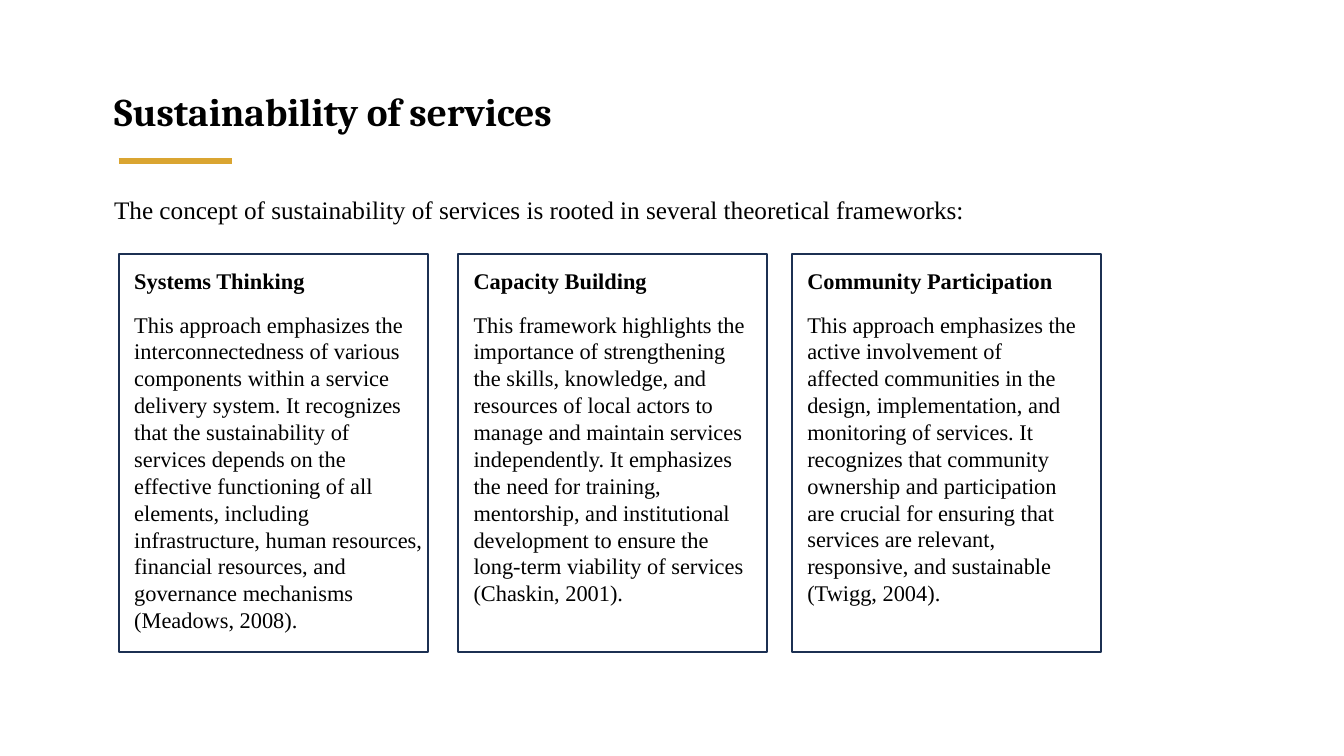
"""Build a slide on the theoretical frameworks behind the sustainability of services."""
from dataclasses import dataclass

from lxml.etree import SubElement
from pptx import Presentation
from pptx.dml.color import RGBColor
from pptx.enum.shapes import MSO_CONNECTOR, MSO_SHAPE
from pptx.enum.text import MSO_ANCHOR, MSO_AUTO_SIZE, PP_ALIGN
from pptx.oxml.ns import qn
from pptx.shapes.autoshape import Shape
from pptx.slide import Slide
from pptx.text.text import TextFrame
from pptx.util import Inches, Length, Pt

SLIDE_WIDTH, SLIDE_HEIGHT = Inches(13.33), Inches(7.5)
GRID_COLUMNS = GRID_ROWS = 12
BODY_FONT, TITLE_FONT = "Times New Roman", "Cambria"
BLACK, NAVY, GOLD = "000000", "1C3052", "DAA531"
TEXT_LEFT = 0.93
CARD_LEFT, CARD_TOP, CARD_WIDTH, CARD_HEIGHT = 1.06, 4.03, 2.76, 6.32
CARD_INDENT, CARD_TEXT_TOP = 0.05, 4.16


@dataclass
class Framework:
    """A framed theory, with its left edge and text size in grid units."""

    left: float
    text_width: float
    text_height: float
    heading: str
    description: str


FRAMEWORKS = [
    Framework(
        CARD_LEFT, 2.76, 6.03, "Systems Thinking",
        "This approach emphasizes the interconnectedness of various components within a "
        "service delivery system. It recognizes that the sustainability of services depends "
        "on the effective functioning of all elements, including infrastructure, human "
        "resources, financial resources, and governance mechanisms (Meadows, 2008).",
    ),
    Framework(
        4.09, 2.6, 6.03, "Capacity Building",
        "This framework highlights the importance of strengthening the skills, knowledge, "
        "and resources of local actors to manage and maintain services independently. It "
        "emphasizes the need for training, mentorship, and institutional development to "
        "ensure the long-term viability of services (Chaskin, 2001).",
    ),
    Framework(
        7.07, 2.6, 5.6, "Community Participation",
        "This approach emphasizes the active involvement of affected communities in the "
        "design, implementation, and monitoring of services. It recognizes that community "
        "ownership and participation are crucial for ensuring that services are relevant, "
        "responsive, and sustainable (Twigg, 2004).",
    ),
]


def columns(count: float) -> Length:
    """Convert grid columns to a length."""
    return Length(round(SLIDE_WIDTH * count / GRID_COLUMNS))


def rows(count: float) -> Length:
    """Convert grid rows to a length."""
    return Length(round(SLIDE_HEIGHT * count / GRID_ROWS))


def color(value: str) -> RGBColor:
    """Turn a hex string into a colour."""
    return RGBColor.from_string(value)


def place(box: Shape, left: float, top: float, width: float, height: float) -> None:
    """Put a box on the grid."""
    box.left, box.top = columns(left), rows(top)
    box.width, box.height = columns(width), rows(height)


def write(frame: TextFrame, texts: list[str], size: float,
          font: str = BODY_FONT, bold_first: bool = False) -> None:
    """Fill a text frame with left-aligned paragraphs."""
    frame.word_wrap = True
    frame.auto_size = MSO_AUTO_SIZE.SHAPE_TO_FIT_TEXT
    frame.vertical_anchor = MSO_ANCHOR.TOP
    for index, text in enumerate(texts):
        para = frame.add_paragraph() if index else frame.paragraphs[0]
        para.text = text
        para.alignment = PP_ALIGN.LEFT
        if index:
            para.space_before = Pt(12)
        para.font.name = font
        para.font.size = Pt(size)
        para.font.bold = bold_first and index == 0
        para.font.color.rgb = color(BLACK)


def add_text(page: Slide, left: float, top: float, width: float, height: float,
             texts: list[str], size: float, bold_first: bool = False) -> None:
    """Add a text box on the grid."""
    box = page.shapes.add_textbox(columns(left), rows(top), columns(width), rows(height))
    write(box.text_frame, texts, size, bold_first=bold_first)


def add_title(page: Slide) -> None:
    """Fill the title placeholder and underline it with a short rule."""
    title = page.shapes.title
    place(title, TEXT_LEFT, 1.31, 9.4, 0.91)
    write(title.text_frame, ["Sustainability of services"], 28, TITLE_FONT, True)
    rule = page.shapes.add_connector(
        MSO_CONNECTOR.STRAIGHT, columns(CARD_LEFT), rows(2.56), columns(2.07), rows(2.56))
    rule.line.color.rgb = color(GOLD)
    rule.line.width = Pt(4.5)
    SubElement(rule.element.spPr, qn("a:effectLst"))


def add_framework(page: Slide, framework: Framework) -> None:
    """Draw a frame with its heading and description."""
    card = page.shapes.add_shape(
        MSO_SHAPE.RECTANGLE, columns(framework.left), rows(CARD_TOP),
        columns(CARD_WIDTH), rows(CARD_HEIGHT))
    card.shadow.inherit = False
    card.fill.background()
    card.line.color.rgb = color(NAVY)
    card.line.width = Pt(1.5)
    add_text(page, framework.left + CARD_INDENT, CARD_TEXT_TOP, framework.text_width,
             framework.text_height, [framework.heading, framework.description], 16, True)


def main() -> None:
    """Build and save the deck."""
    deck = Presentation()
    deck.slide_width, deck.slide_height = SLIDE_WIDTH, SLIDE_HEIGHT
    page = deck.slides.add_slide(deck.slide_layouts.get_by_name("Title Only"))
    add_title(page)
    add_text(page, TEXT_LEFT, 3.01, 9.63, 0.64,
             ["The concept of sustainability of services is rooted in several "
              "theoretical frameworks:"], 18)
    for framework in FRAMEWORKS:
        add_framework(page, framework)
    deck.save("out.pptx")


if __name__ == "__main__":
    main()
